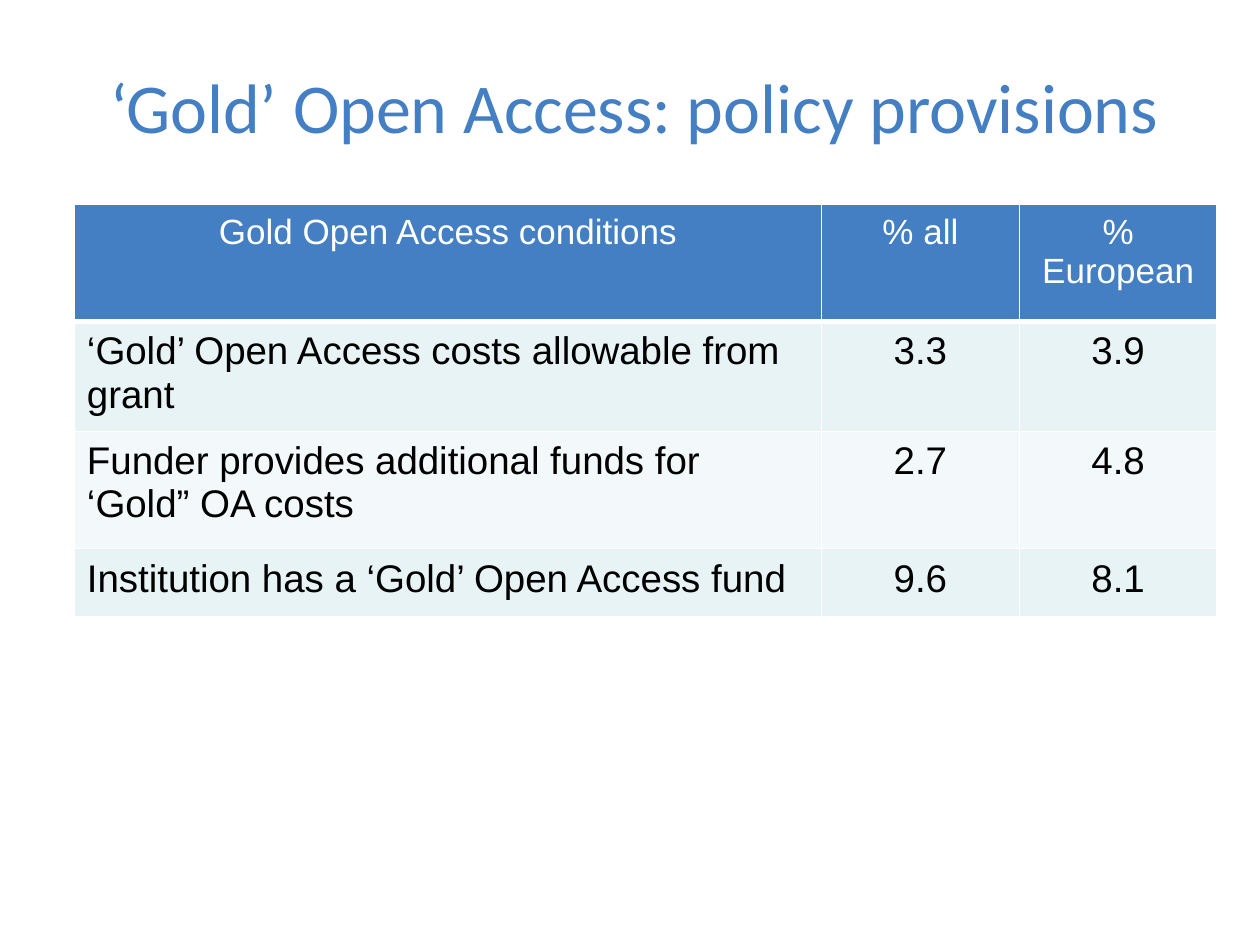
import lxml.etree
import pptx
import pptx.dml.color
import pptx.enum.text
import pptx.oxml.ns
import pptx.util

Inches = pptx.util.Inches
CENTER = pptx.enum.text.PP_ALIGN.CENTER
LEFT = pptx.enum.text.PP_ALIGN.LEFT

BLUE = "437FC2"
WHITE = "FFFFFF"
BLACK = "000000"
BAND_FILLS = ("E7F3F4", "F3F9FA")
COLUMN_WIDTHS = (5.93, 1.57, 1.57)
ROW_HEIGHTS = (0.93, 0.82, 0.93, 0.54)
ROWS = (
    ("Gold Open Access conditions", "% all", "% European"),
    ("‘Gold’ Open Access costs allowable from grant", "3.3", "3.9"),
    ("Funder provides additional funds for ‘Gold” OA costs", "2.7", "4.8"),
    ("Institution has a ‘Gold’ Open Access fund", "9.6", "8.1"),
)


def color(value):
    """Return the colour for a hex string."""
    return pptx.dml.color.RGBColor.from_string(value)


def write_text(text_frame, text, font_name, size, text_color, alignment):
    """Fill a text frame with one formatted paragraph."""
    text_frame.text = text
    paragraph = text_frame.paragraphs[0]
    paragraph.alignment = alignment
    font = paragraph.runs[0].font
    font.name = font_name
    font.size = pptx.util.Pt(size)
    font.color.rgb = color(text_color)


def add_title(slide, text):
    """Add the centred slide title."""
    shape = slide.shapes.add_textbox(Inches(0.35), Inches(0.21), Inches(9.37), Inches(1.26))
    text_frame = shape.text_frame
    text_frame.word_wrap = True
    text_frame.vertical_anchor = pptx.enum.text.MSO_ANCHOR.MIDDLE
    write_text(text_frame, text, "Calibri", 40, BLUE, CENTER)


def set_borders(cell, top, bottom):
    """Draw white cell borders, with top and bottom widths in points."""
    properties = cell._tc.get_or_add_tcPr()
    for side, width in (("L", 1), ("R", 1), ("T", top), ("B", bottom)):
        line = lxml.etree.SubElement(
            properties, pptx.oxml.ns.qn(f"a:ln{side}"), w=str(pptx.util.Pt(width))
        )
        fill = lxml.etree.SubElement(line, pptx.oxml.ns.qn("a:solidFill"))
        lxml.etree.SubElement(fill, pptx.oxml.ns.qn("a:srgbClr"), val=WHITE)


def format_cell(cell, text, row, column):
    """Write and style one table cell according to its position."""
    header = row == 0
    set_borders(cell, 3 if row == 1 else 1, 3 if header else 1)
    cell.fill.solid()
    cell.fill.fore_color.rgb = color(BLUE if header else BAND_FILLS[(row - 1) % 2])
    cell.margin_left = cell.margin_right = Inches(0.1)
    cell.margin_top = cell.margin_bottom = Inches(0.07)
    write_text(
        cell.text_frame,
        text,
        "Arial",
        20 if header else 22,
        WHITE if header else BLACK,
        CENTER if header or column > 0 else LEFT,
    )
    cell.text_frame.paragraphs[0].runs[0].font.bold = False


def add_conditions_table(slide):
    """Add the table of Gold Open Access conditions."""
    table = slide.shapes.add_table(
        len(ROWS), len(COLUMN_WIDTHS), Inches(0.59), Inches(1.62),
        Inches(sum(COLUMN_WIDTHS)), Inches(sum(ROW_HEIGHTS)),
    ).table
    for column, width in zip(table.columns, COLUMN_WIDTHS):
        column.width = Inches(width)
    for row, height in zip(table.rows, ROW_HEIGHTS):
        row.height = Inches(height)
    for row, texts in enumerate(ROWS):
        for column, text in enumerate(texts):
            format_cell(table.cell(row, column), text, row, column)


def main():
    """Build and save the presentation."""
    presentation = pptx.Presentation()
    presentation.slide_width = Inches(10)
    presentation.slide_height = Inches(7.5)
    slide = presentation.slides.add_slide(presentation.slide_layouts[6])
    add_title(slide, "‘Gold’ Open Access: policy provisions")
    add_conditions_table(slide)
    presentation.save("out.pptx")


if __name__ == "__main__":
    main()
